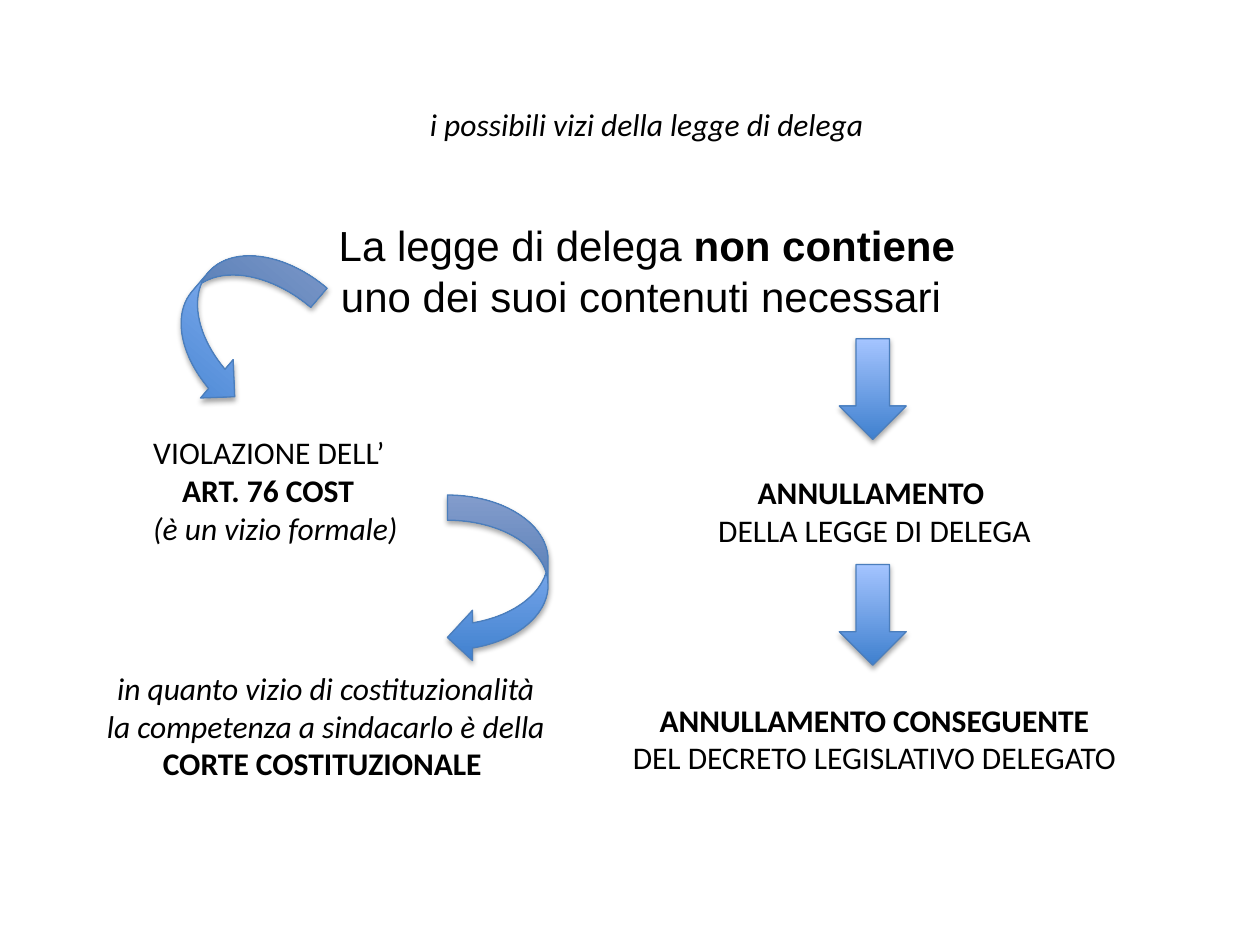
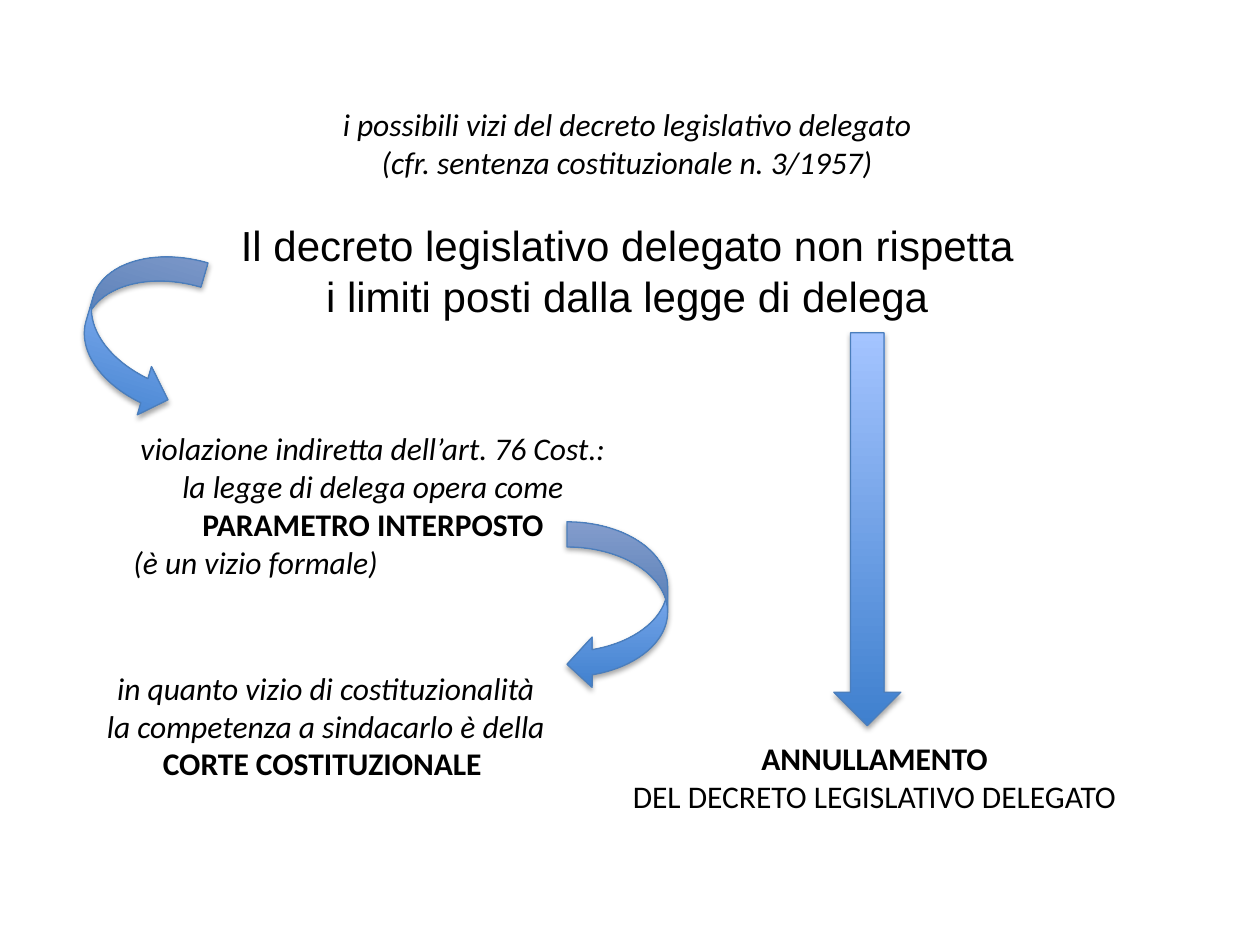
from dataclasses import dataclass

from lxml.etree import SubElement
from pptx import Presentation
from pptx.dml.color import RGBColor
from pptx.enum.shapes import MSO_SHAPE
from pptx.enum.text import MSO_ANCHOR, MSO_AUTO_SIZE, PP_ALIGN
from pptx.oxml.ns import qn
from pptx.util import Cm, Pt


def color(hex_value):
    """Turn a hex string into a colour."""
    return RGBColor.from_string(hex_value)


@dataclass
class Line:
    """One paragraph, with its emphasis and placing."""
    text: str
    bold: bool = False
    italic: bool = False
    align: PP_ALIGN = PP_ALIGN.CENTER
    indent: float = 0
    bold_end: str = ""


class Deck:
    """Hold the shared style and the slide being drawn."""

    INK, DARK, LIGHT, EDGE, SHADOW = "000000", "3F80CE", "A4C4FF", "4B7EBC", "000000"
    HEADING = ("Arial", 24)
    BODY = ("Calibri", 18)
    LINE_HEIGHT = 0.77
    CURVED = (2.03, 3.38)

    def __init__(self):
        """Open a 4:3 deck."""
        self.deck = Presentation()
        self.deck.slide_width, self.deck.slide_height = Cm(25.4), Cm(19.05)
        self.page = None

    def new_page(self):
        """Start a slide that has only a title."""
        self.page = self.deck.slides.add_slide(self.deck.slide_layouts[5])

    def fill_text(self, frame, lines, style):
        """Fill a text frame with styled lines."""
        font_name, size = style
        frame.auto_size = MSO_AUTO_SIZE.NONE
        frame.word_wrap = True
        frame.vertical_anchor = MSO_ANCHOR.TOP
        frame.text = "\n".join(line.text for line in lines)
        for para, line in zip(frame.paragraphs, lines):
            para.alignment = line.align
            if line.indent:
                para._p.get_or_add_pPr().set("marL", str(Cm(line.indent)))
            if line.bold_end:
                para.add_run().text = line.bold_end
            for index, span in enumerate(para.runs):
                span.font.name, span.font.size = font_name, Pt(size)
                span.font.bold = line.bold or index > 0
                span.font.italic = line.italic
                span.font.color.rgb = color(self.INK)

    def title(self, left, width, lines):
        """Place the heading in the title placeholder."""
        box = self.page.shapes.title
        box.left, box.top, box.width, box.height = Cm(left), Cm(4.29), Cm(width), Cm(2.3)
        self.fill_text(box.text_frame, lines, self.HEADING)
        for para in box.text_frame.paragraphs:
            para.line_spacing = Pt(29)

    def text(self, left, top, width, lines):
        """Add a text box as tall as its lines."""
        height = len(lines) * self.LINE_HEIGHT + 0.26
        box = self.page.shapes.add_textbox(Cm(left), Cm(top), Cm(width), Cm(height))
        self.fill_text(box.text_frame, lines, self.BODY)

    def arrow(self, kind, left, top, size, rotation=0):
        """Add a block arrow with gradient and soft shadow."""
        width, height = size
        shape = self.page.shapes.add_shape(kind, Cm(left), Cm(top), Cm(width), Cm(height))
        shape.rotation = rotation
        shape.fill.gradient()
        shape.fill.gradient_angle = 90
        for stop, shade in zip(shape.fill.gradient_stops, (self.DARK, self.LIGHT)):
            stop.color.rgb = color(shade)
        shape.line.color.rgb = color(self.EDGE)
        shape.line.width = Pt(0.75)
        shape.shadow.inherit = False
        effects = shape._element.spPr.find(qn("a:effectLst"))
        shadow = SubElement(effects, qn("a:outerShdw"), blurRad=str(Pt(3.1)),
                            dist=str(Pt(1.8)), dir="5400000", rotWithShape="0")
        shade = SubElement(shadow, qn("a:srgbClr"), val=self.SHADOW)
        SubElement(shade, qn("a:alpha"), val="35000")

    def down_arrow(self, left, top, height):
        """Add a straight arrow pointing down."""
        self.arrow(MSO_SHAPE.DOWN_ARROW, left, top, (1.35, height))

    def curved_pair(self, first, rotation, second):
        """Add the two curved arrows of the left column."""
        self.arrow(MSO_SHAPE.CURVED_RIGHT_ARROW, *first, self.CURVED, rotation)
        self.arrow(MSO_SHAPE.CURVED_LEFT_ARROW, *second, self.CURVED)

    def court(self):
        """Name the court that judges the flaw."""
        self.text(1.3, 13.36, 10.54, [
            Line("in quanto vizio di costituzionalità", italic=True),
            Line("la competenza a sindacarlo è della", italic=True),
            Line("CORTE COSTITUZIONALE ", bold=True)])

    def outcome(self, top, effect, target):
        """State an annulment in the right column."""
        self.text(12.45, top, 10.36, [Line(effect, bold=True), Line(target)])

    def save(self):
        """Save the finished deck."""
        self.deck.save("out.pptx")


def build_delegating_law(deck):
    """Draw the flaws of the delegating law."""
    deck.new_page()
    left, width = 2.84, 20.4
    deck.text(left, 2, width, [Line("i possibili vizi della legge di delega", italic=True)])
    deck.title(left, width, [
        Line("La legge di delega ", bold_end="non contiene"),
        Line("uno dei suoi contenuti necessari ")])
    deck.text(left, 8.61, 7, [
        Line("VIOLAZIONE DELL’", align=PP_ALIGN.LEFT),
        Line("ART. 76 COST", bold=True, align=PP_ALIGN.LEFT, indent=0.58),
        Line("(è un vizio formale)", italic=True, align=PP_ALIGN.LEFT)])
    deck.curved_pair((3.71, 4.75), 40.4, (9.02, 9.98))
    for top in (6.83, 11.38):
        deck.down_arrow(16.92, top, 2.03)
    deck.outcome(9.42, "ANNULLAMENTO ", "DELLA LEGGE DI DELEGA")
    deck.outcome(14, "ANNULLAMENTO CONSEGUENTE", "DEL DECRETO LEGISLATIVO DELEGATO")
    deck.court()


def build_legislative_decree(deck):
    """Draw the flaws of the delegated decree."""
    deck.new_page()
    left, width = 2.03, 21.23
    deck.text(left, 2, width, [
        Line("i possibili vizi del decreto legislativo delegato", italic=True),
        Line("(cfr. sentenza costituzionale n. 3/1957)", italic=True)])
    deck.title(left, width, [
        Line("Il decreto legislativo delegato non rispetta"),
        Line("i limiti posti dalla legge di delega")])
    deck.outcome(14.78, "ANNULLAMENTO", "DEL DECRETO LEGISLATIVO DELEGATO")
    deck.court()
    deck.text(2.44, 8.53, 10.16, [
        Line("violazione indiretta dell’art. 76 Cost.:", italic=True),
        Line("la legge di delega opera come", italic=True),
        Line("PARAMETRO INTERPOSTO", bold=True),
        Line("(è un vizio formale)", italic=True, align=PP_ALIGN.LEFT)])
    deck.curved_pair((1.73, 4.95), 16.3, (11.43, 10.52))
    deck.down_arrow(16.81, 6.71, 7.92)


def main():
    """Build both slides and save them."""
    deck = Deck()
    build_delegating_law(deck)
    build_legislative_decree(deck)
    deck.save()


if __name__ == "__main__":
    main()
